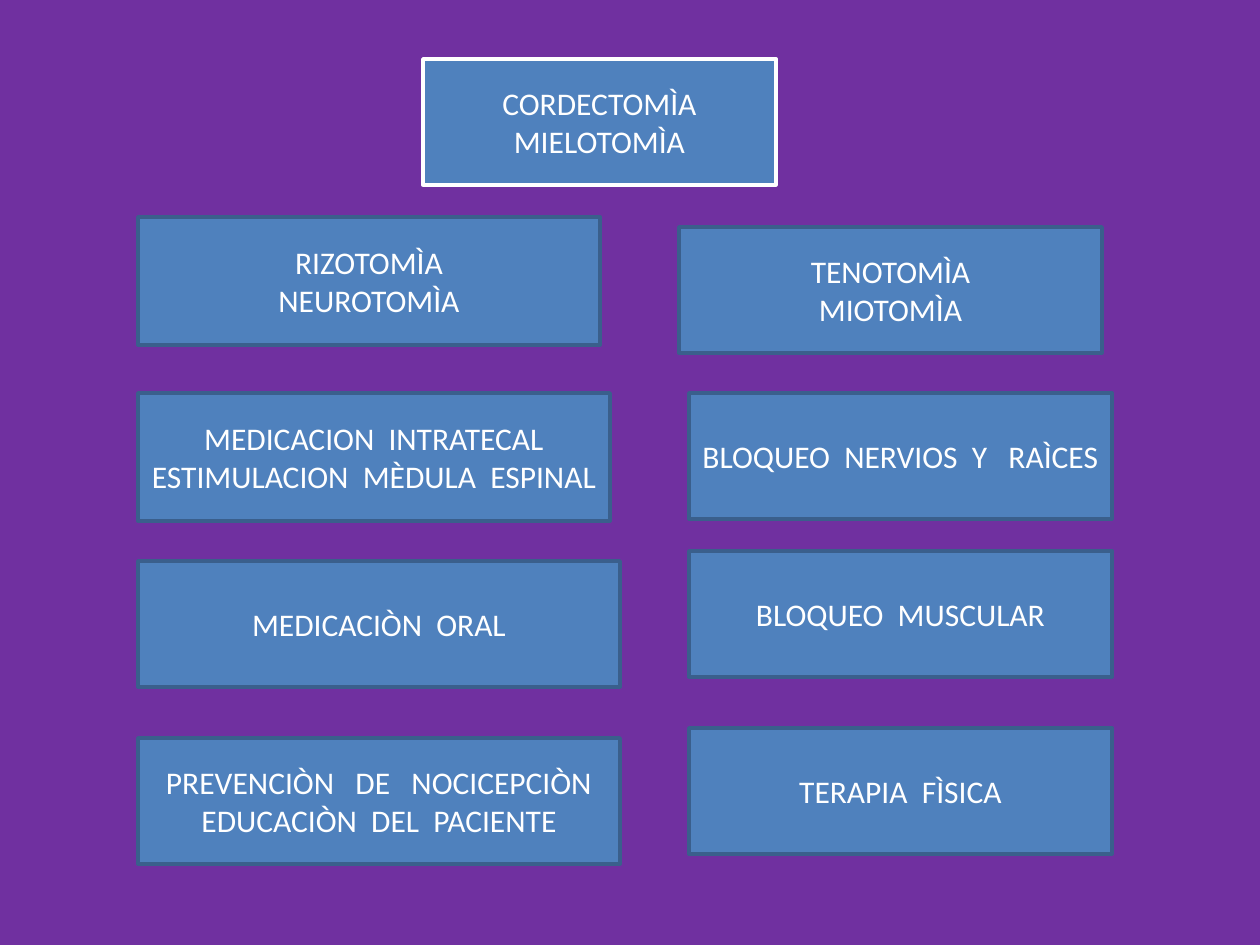
"""Build a slide of pain treatment steps, from prevention up to surgery."""
from pptx import Presentation
from pptx.dml.color import RGBColor
from pptx.enum.shapes import MSO_SHAPE as Shape
from pptx.enum.text import MSO_ANCHOR as Anchor, PP_ALIGN as Align
from pptx.util import Pt

PX = 914400 / 126
WHITE, BLUE, NAVY, PURPLE = "FFFFFF", "4F81BD", "3A5F8C", "7030A0"


def paint(fill, color):
    fill.solid()
    fill.fore_color.rgb = RGBColor.from_string(color)


def write(box, text, size=18, font="Calibri", color=WHITE, align=Align.CENTER):
    frame = box.text_frame
    frame.word_wrap = True
    frame.vertical_anchor = Anchor.MIDDLE
    frame.text = text
    for para in frame.paragraphs:
        para.alignment = align
        for span in para.runs:
            span.font.size = Pt(size)
            span.font.name = font
            paint(span.font.fill, color)


deck = Presentation()
deck.slide_width, deck.slide_height = round(1260 * PX), round(945 * PX)
page = deck.slides.add_slide(deck.slide_layouts[6])
paint(page.background.fill, PURPLE)

treatments = [
    (423, 59, 353, 126, WHITE, "CORDECTOMÌA\nMIELOTOMÌA"),
    (138, 217, 462, 128, NAVY, "RIZOTOMÌA\nNEUROTOMÌA"),
    (679, 227, 423, 126, NAVY, "TENOTOMÌA\nMIOTOMÌA"),
    (138, 393, 472, 128, NAVY, "MEDICACION  INTRATECAL\nESTIMULACION  MÈDULA  ESPINAL"),
    (689, 393, 423, 126, NAVY, "BLOQUEO  NERVIOS  Y   RAÌCES"),
    (138, 561, 482, 126, NAVY, "MEDICACIÒN  ORAL"),
    (689, 551, 423, 126, NAVY, "BLOQUEO  MUSCULAR"),
    (138, 738, 482, 126, NAVY, "PREVENCIÒN   DE   NOCICEPCIÒN\nEDUCACIÒN  DEL  PACIENTE"),
    (689, 728, 423, 126, NAVY, "TERAPIA  FÌSICA"),
]

for *bounds, border, label in treatments:
    box = page.shapes.add_shape(Shape.RECTANGLE, *(round(length * PX) for length in bounds))
    box.shadow.inherit = False
    paint(box.fill, BLUE)
    paint(box.line.fill, border)
    box.line.width = Pt(2)
    write(box, label)

deck.save("out.pptx")
